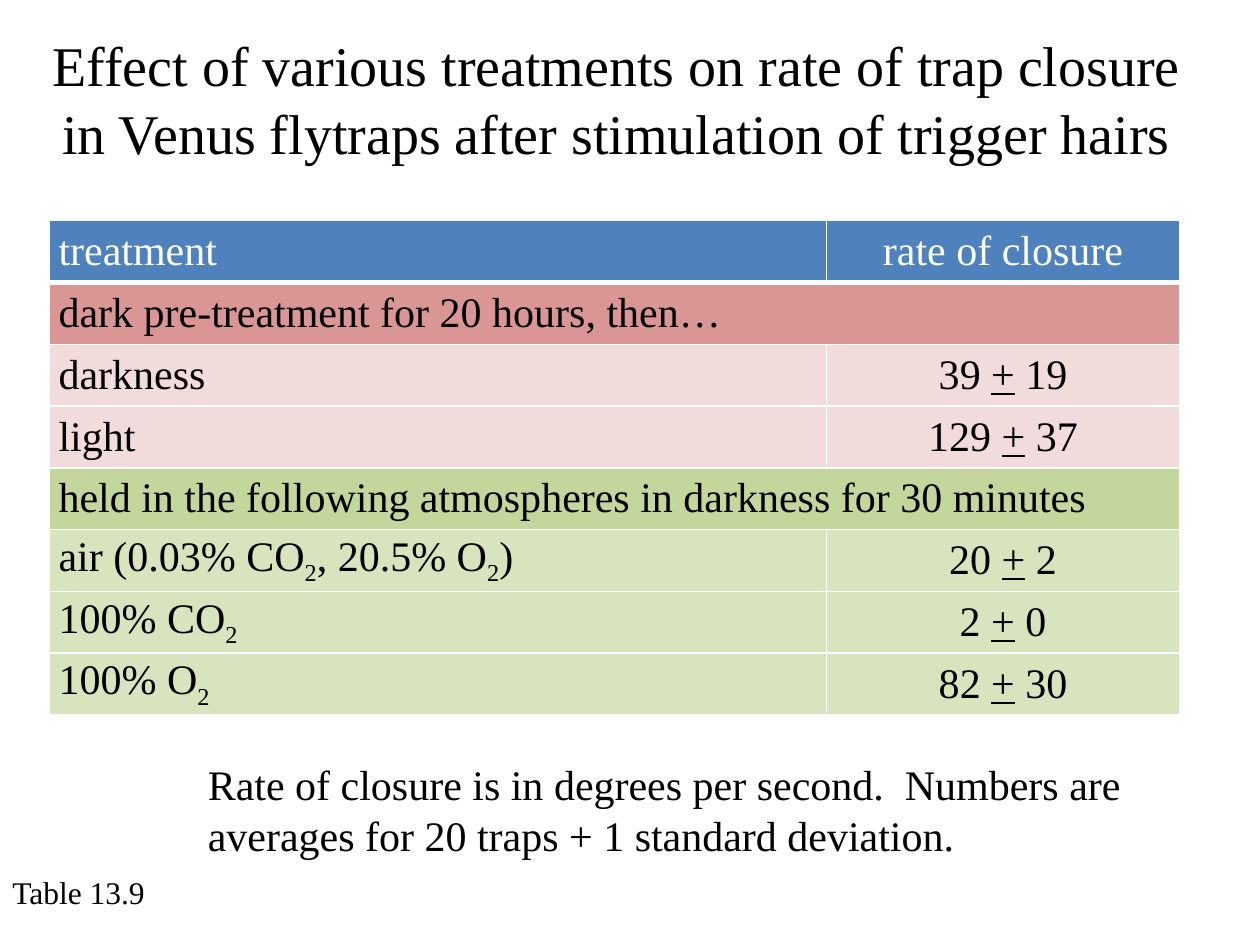
"""Build the slide on trap closure rates in Venus flytraps."""
import pptx
import pptx.dml.color
import pptx.enum.text
import pptx.oxml
import pptx.oxml.ns
import pptx.util

Cm = pptx.util.Cm
Pt = pptx.util.Pt
ALIGN = pptx.enum.text.PP_ALIGN
AUTO_SIZE = pptx.enum.text.MSO_AUTO_SIZE

FONT = "Times New Roman"
COLOURS = {
    "text": "000000",
    "header_text": "FFFFFF",
    "border": "FFFFFF",
    "header": "4F81BD",
    "dark_group": "D99694",
    "dark": "F2DCDB",
    "air_group": "C3D69B",
    "air": "D7E4BD",
}
TREATMENTS = [
    ("header", "treatment", "rate of closure"),
    ("dark_group", "dark pre-treatment for 20 hours, then…", None),
    ("dark", "darkness", "39 |+| 19"),
    ("dark", "light", "129 |+| 37"),
    ("air_group", "held in the following atmospheres in darkness for 30 minutes", None),
    ("air", "air (0.03% CO|2|, 20.5% O|2|)", "20 |+| 2"),
    ("air", "100% CO|2", "2 |+| 0"),
    ("air", "100% O|2", "82 |+| 30"),
]
COLUMN_WIDTHS = (15.66, 7.12)
ROW_HEIGHT = 1.245


def rgb(name):
    """Return the named colour."""
    return pptx.dml.color.RGBColor.from_string(COLOURS[name])


def set_all(target, values):
    """Set every attribute in values on target."""
    for name, value in values.items():
        setattr(target, name, value)


def add_run(paragraph, text, size, colour="text"):
    """Append a formatted run to a paragraph."""
    run = paragraph.add_run()
    run.text = text
    set_all(run.font, {"name": FONT, "size": Pt(size), "bold": False})
    run.font.color.rgb = rgb(colour)
    return run


def add_text(slide, text, box, size, align=ALIGN.LEFT, wrap=True):
    """Add a text box that grows with its text."""
    frame = slide.shapes.add_textbox(*map(Cm, box)).text_frame
    set_all(frame, {"word_wrap": wrap, "auto_size": AUTO_SIZE.SHAPE_TO_FIT_TEXT})
    frame.paragraphs[0].alignment = align
    add_run(frame.paragraphs[0], text, size)


def add_borders(cell, bottom_width):
    """Draw the four borders of a cell."""
    properties = cell._tc.get_or_add_tcPr()
    for side, width in {"L": 1, "R": 1, "T": 1, "B": bottom_width}.items():
        properties.append(pptx.oxml.parse_xml(
            f'<a:ln{side} {pptx.oxml.ns.nsdecls("a")} w="{Pt(width)}">'
            f'<a:solidFill><a:srgbClr val="{COLOURS["border"]}"/></a:solidFill>'
            f'</a:ln{side}>'))


def fill_cell(cell, text, kind, is_rate):
    """Style a cell; every second piece of text is underlined or subscript."""
    is_header = kind == "header"
    add_borders(cell, 3 if is_header else 1)
    cell.fill.solid()
    cell.fill.fore_color.rgb = rgb(kind)
    set_all(cell, {
        "margin_left": Cm(0.18), "margin_right": Cm(0.18),
        "margin_top": 0, "margin_bottom": 0,
        "vertical_anchor": pptx.enum.text.MSO_ANCHOR.MIDDLE,
    })
    if text is None:
        return
    paragraph = cell.text_frame.paragraphs[0]
    paragraph.alignment = ALIGN.CENTER if is_rate else ALIGN.LEFT
    for index, piece in enumerate(text.split("|")):
        if not piece:
            continue
        run = add_run(paragraph, piece, 24, "header_text" if is_header else "text")
        if index % 2 and is_rate:
            run.font.underline = True
        elif index % 2:
            run._r.get_or_add_rPr().set("baseline", "-25000")


def add_treatments(slide):
    """Add the table of treatments and closure rates."""
    count = len(TREATMENTS)
    table = slide.shapes.add_table(
        count, 2, Cm(1), Cm(4.45), Cm(sum(COLUMN_WIDTHS)), Cm(ROW_HEIGHT * count)).table
    for column, width in zip(table.columns, COLUMN_WIDTHS):
        column.width = Cm(width)
    for row, (kind, treatment, rate) in enumerate(TREATMENTS):
        table.rows[row].height = Cm(ROW_HEIGHT)
        fill_cell(table.cell(row, 0), treatment, kind, False)
        fill_cell(table.cell(row, 1), rate, kind, True)
        if rate is None:
            table.cell(row, 0).merge(table.cell(row, 1))


def main():
    """Build and save the slide."""
    presentation = pptx.Presentation()
    set_all(presentation, {"slide_width": Cm(25.4), "slide_height": Cm(19.05)})
    slide = presentation.slides.add_slide(presentation.slide_layouts[6])
    add_text(slide, "Effect of various treatments on rate of trap closure in Venus "
             "flytraps after stimulation of trigger hairs",
             (0.64, 0.5, 23.6, 3), 32, ALIGN.CENTER)
    add_text(slide, "Table 13.9", (0, 17.48, 3.38, 1.02), 18, wrap=False)
    add_treatments(slide)
    add_text(slide, "Rate of closure is in degrees per second.  Numbers are averages "
             "for 20 traps + 1 standard deviation.", (3.94, 15.17, 20.3, 2.31), 24)
    presentation.save("out.pptx")


if __name__ == "__main__":
    main()
